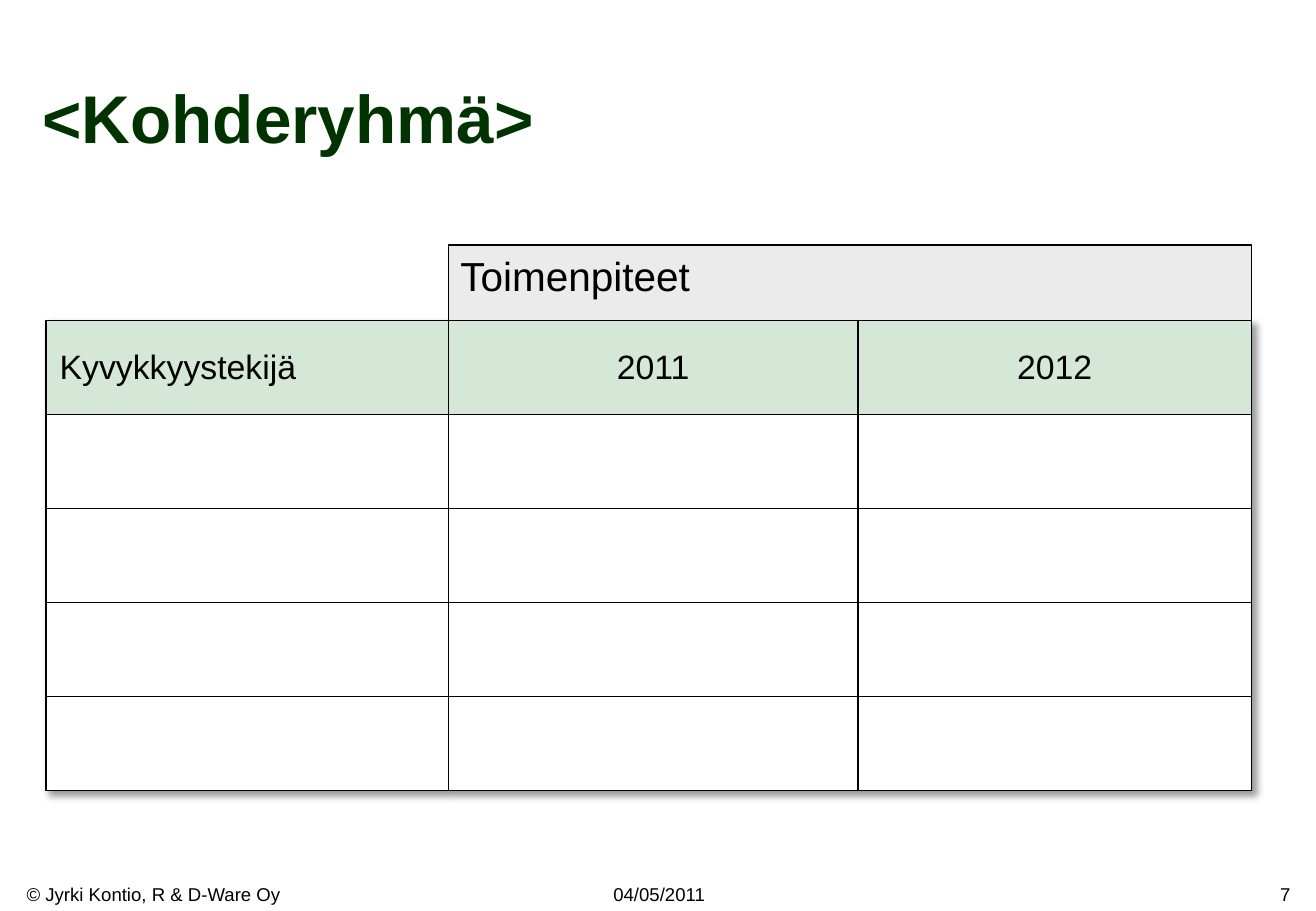
from dataclasses import dataclass

from lxml import etree
from pptx import Presentation
from pptx.dml.color import RGBColor
from pptx.enum.shapes import MSO_SHAPE
from pptx.enum.text import MSO_ANCHOR, MSO_AUTO_SIZE, PP_ALIGN
from pptx.oxml import parse_xml
from pptx.oxml.ns import nsdecls, qn
from pptx.slide import Slide
from pptx.table import _Cell
from pptx.text.text import TextFrame
from pptx.util import Inches, Pt

RECTANGLE = MSO_SHAPE.RECTANGLE
TOP, MIDDLE, BOTTOM = MSO_ANCHOR.TOP, MSO_ANCHOR.MIDDLE, MSO_ANCHOR.BOTTOM
LEFT, CENTER, RIGHT = PP_ALIGN.LEFT, PP_ALIGN.CENTER, PP_ALIGN.RIGHT
NO_AUTOFIT = MSO_AUTO_SIZE.NONE

BLACK = RGBColor(0x00, 0x00, 0x00)
WHITE = RGBColor(0xFF, 0xFF, 0xFF)
DARK_GREEN = RGBColor(0x00, 0x33, 0x00)
PALE_GREEN = RGBColor(0xD5, 0xE7, 0xD6)
LIGHT_GREY = RGBColor(0xEB, 0xEB, 0xEB)

FONT = "Arial"
WIDTH, HEIGHT = Inches(10.83), Inches(7.5)
TITLE_ONLY = 5
LINE_WIDTH = Pt(1)

TABLE_LEFT, TABLE_TOP = 3.51, 35.2
COLUMNS = (30.56, 31.12, 29.92)
ROW_HEIGHT, ROW_COUNT = 10.32, 5
BAND_TOP = 26.93


@dataclass(frozen=True)
class Box:
    left: float
    top: float
    width: float
    height: float

    def emu(self) -> tuple[int, int, int, int]:
        return x(self.left), y(self.top), x(self.width), y(self.height)


@dataclass(frozen=True)
class Label:
    text: str
    align: PP_ALIGN


@dataclass(frozen=True)
class Footer:
    label: Label
    left: float
    width: float


HEADERS = (
    Label("Kyvykkyystekijä", LEFT),
    Label("2011", CENTER),
    Label("2012", CENTER),
)
FOOTERS = (
    Footer(Label("© Jyrki Kontio, R & D-Ware Oy", LEFT), 1.11, 21.33),
    Footer(Label("04/05/2011", CENTER), 45.61, 8.96),
    Footer(Label("7", RIGHT), 95.38, 3.6),
)


def x(percent: float) -> int:
    return round(WIDTH * percent / 100)


def y(percent: float) -> int:
    return round(HEIGHT * percent / 100)


def write(tf: TextFrame, label: Label, size: int, anchor: MSO_ANCHOR,
          color: RGBColor = BLACK, bold: bool = False) -> None:
    tf.vertical_anchor = anchor
    p = tf.paragraphs[0]
    p.text = label.text
    p.alignment = label.align
    p.font.name = FONT
    p.font.size = Pt(size)
    p.font.bold = bold
    p.font.color.rgb = color


def add_title(slide: Slide) -> None:
    sp = slide.shapes.title
    sp.left, sp.top, sp.width, sp.height = Box(2.31, 1.07, 78.49, 16.8).emu()
    sp.text_frame.auto_size = NO_AUTOFIT
    write(sp.text_frame, Label("<Kohderyhmä>", LEFT), 40, BOTTOM, DARK_GREEN, True)


def add_footer(slide: Slide, footer: Footer) -> None:
    sp = slide.shapes.add_textbox(*Box(footer.left, 96.27, footer.width, 3.73).emu())
    sp.text_frame.word_wrap = False
    write(sp.text_frame, footer.label, 11, MIDDLE)


def add_borders(cell: _Cell) -> None:
    tc_pr = cell._tc.get_or_add_tcPr()
    for side in ("lnL", "lnR", "lnT", "lnB"):
        ln = etree.SubElement(tc_pr, qn(f"a:{side}"), w=str(LINE_WIDTH))
        fill = etree.SubElement(ln, qn("a:solidFill"))
        etree.SubElement(fill, qn("a:srgbClr"), val=str(BLACK))


def add_plan_table(slide: Slide) -> None:
    box = Box(TABLE_LEFT, TABLE_TOP, sum(COLUMNS), ROW_HEIGHT * ROW_COUNT)
    table = slide.shapes.add_table(ROW_COUNT, len(COLUMNS), *box.emu()).table
    table.horz_banding = False
    table._tbl.tblPr.insert(0, parse_xml(
        f'<a:effectLst {nsdecls("a")}><a:outerShdw blurRad="50800" dist="38100" '
        'dir="2700000" algn="tl" rotWithShape="0"><a:srgbClr val="000000">'
        '<a:alpha val="40000"/></a:srgbClr></a:outerShdw></a:effectLst>'))
    for column, width in zip(table.columns, COLUMNS):
        column.width = x(width)
    for i, row in enumerate(table.rows):
        row.height = y(ROW_HEIGHT)
        for cell in row.cells:
            add_borders(cell)
            cell.fill.solid()
            cell.fill.fore_color.rgb = WHITE if i else PALE_GREEN
    for cell, label in zip(table.rows[0].cells, HEADERS):
        cell.margin_left = cell.margin_right = Inches(0.11)
        cell.vertical_anchor = MIDDLE
        write(cell.text_frame, label, 20, MIDDLE)


def add_actions_band(slide: Slide) -> None:
    box = Box(TABLE_LEFT + COLUMNS[0], BAND_TOP, sum(COLUMNS[1:]), TABLE_TOP - BAND_TOP)
    sp = slide.shapes.add_shape(RECTANGLE, *box.emu())
    sp.shadow.inherit = False
    sp.fill.solid()
    sp.fill.fore_color.rgb = LIGHT_GREY
    sp.line.color.rgb = BLACK
    sp.line.width = LINE_WIDTH
    write(sp.text_frame, Label("Toimenpiteet", LEFT), 24, TOP)


def main() -> None:
    prs = Presentation()
    prs.slide_width, prs.slide_height = WIDTH, HEIGHT
    slide = prs.slides.add_slide(prs.slide_layouts[TITLE_ONLY])
    for footer in FOOTERS:
        add_footer(slide, footer)
    add_title(slide)
    add_plan_table(slide)
    add_actions_band(slide)
    prs.save("out.pptx")


if __name__ == "__main__":
    main()
